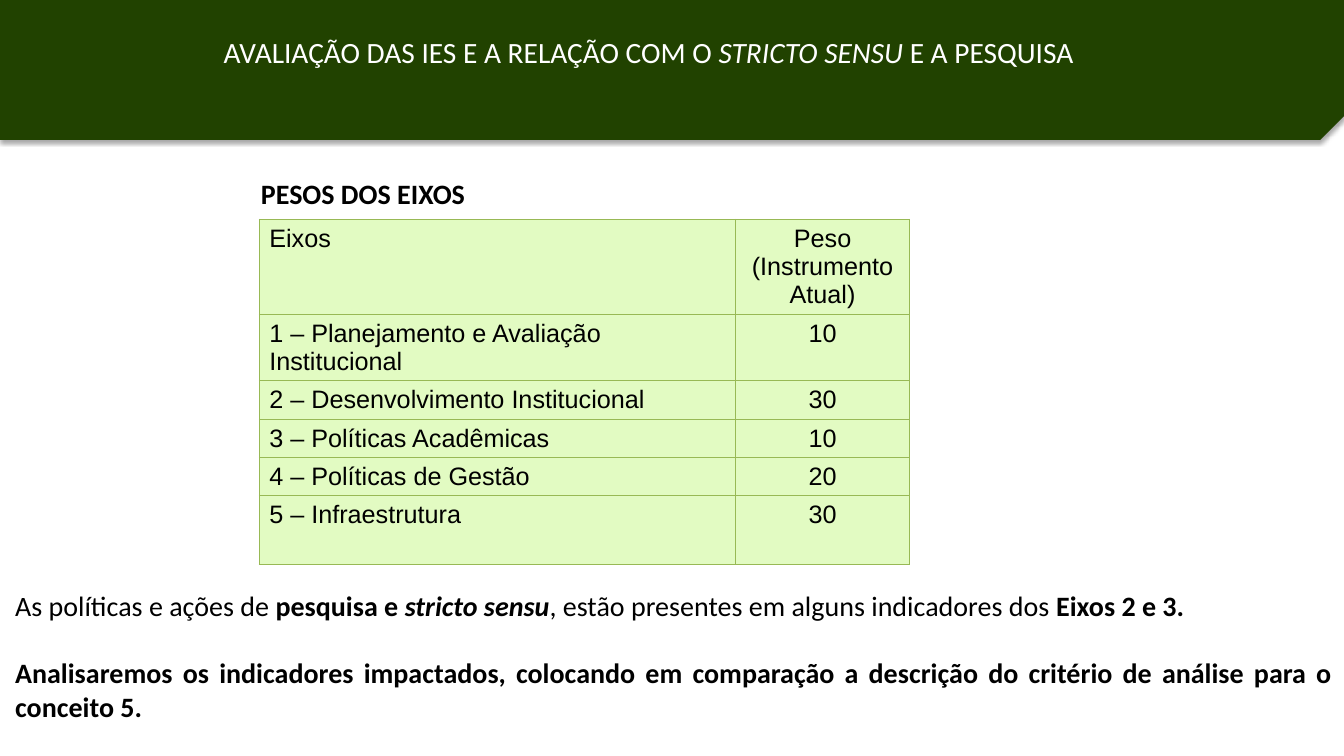
from dataclasses import dataclass
from typing import NamedTuple

from lxml import etree
from pptx import Presentation
from pptx.dml.color import RGBColor
from pptx.enum.shapes import MSO_SHAPE
from pptx.enum.text import MSO_ANCHOR, MSO_AUTO_SIZE, PP_ALIGN
from pptx.oxml.ns import qn
from pptx.util import Pt

SNIPPED = MSO_SHAPE.SNIP_1_RECTANGLE
TOP = MSO_ANCHOR.TOP
NO_FIT = MSO_AUTO_SIZE.NONE
LEFT, CENTER, JUSTIFY = PP_ALIGN.LEFT, PP_ALIGN.CENTER, PP_ALIGN.JUSTIFY


@dataclass(frozen=True)
class Theme:
    banner: str = "214200"
    cell: str = "E2FBC2"
    border: str = "98B955"
    ink: str = "000000"
    light: str = "FFFFFF"
    text_font: str = "Calibri"
    table_font: str = "Arial"
    title_size: float = 21
    text_size: float = 20
    table_size: float = 18
    border_width: float = 0.75


class Box(NamedTuple):
    left: float
    top: float
    width: float
    height: float


class Span(NamedTuple):
    text: str
    bold: bool = False
    italic: bool = False


class Axis(NamedTuple):
    name: str
    weight: str
    height: float


THEME = Theme()
TITLE = [Span("AVALIAÇÃO DAS IES E A RELAÇÃO COM O "),
         Span("STRICTO SENSU ", italic=True), Span("E A PESQUISA")]
HEADING = [Span("PESOS DOS EIXOS", bold=True)]
BODY = [
    [Span("As políticas e ações de "), Span("pesquisa e ", bold=True),
     Span("stricto sensu", bold=True, italic=True),
     Span(", estão presentes em alguns indicadores dos "),
     Span("Eixos 2 e 3.", bold=True)],
    [Span("Analisaremos os indicadores impactados, colocando em comparação a "
          "descrição do critério de análise para o conceito 5.", bold=True)],
]
AXES = [
    Axis("Eixos", "Peso\n(Instrumento Atual)", 67.8),
    Axis("1 – Planejamento e Avaliação Institucional", "10", 47.2),
    Axis("2 – Desenvolvimento Institucional", "30", 27.4),
    Axis("3 – Políticas Acadêmicas", "10", 27.4),
    Axis("4 – Políticas de Gestão", "20", 27.4),
    Axis("5 – Infraestrutura", "30", 49.2),
]
COLUMN_WIDTHS = (340, 124.8)


def place(sp, box: Box) -> None:
    sp.left, sp.top, sp.width, sp.height = map(Pt, box)


def style_run(r, font: str, size: float, color: str) -> None:
    r.font.name, r.font.size = font, Pt(size)
    r.font.color.rgb = RGBColor.from_string(color)


def write(sp, paragraphs: list, size: float, color: str,
          align=LEFT, gap: float = 0) -> None:
    tf = sp.text_frame
    tf.word_wrap, tf.auto_size, tf.vertical_anchor = True, NO_FIT, TOP
    for i, spans in enumerate(paragraphs):
        p = tf.paragraphs[0] if i == 0 else tf.add_paragraph()
        p.alignment, p.line_spacing = align, 1.0
        p.space_before, p.space_after = Pt(gap if i else 0), Pt(0)
        pPr = p._p.get_or_add_pPr()
        pPr.set("marL", "0")
        pPr.set("indent", "0")
        etree.SubElement(pPr, qn("a:buNone"))
        for span in spans:
            r = p.add_run()
            r.text = span.text
            r.font.bold, r.font.italic = span.bold, span.italic
            style_run(r, THEME.text_font, size, color)


def add_banner(s, box: Box):
    sp = s.shapes.add_shape(SNIPPED, *map(Pt, box))
    sp.fill.solid()
    sp.fill.fore_color.rgb = RGBColor.from_string(THEME.banner)
    sp.line.fill.background()
    sp.shadow.inherit = False
    spPr = sp._element.spPr
    spPr.find(qn("a:xfrm")).set("flipV", "1")
    shadow = etree.SubElement(
        spPr.find(qn("a:effectLst")), qn("a:outerShdw"), blurRad=str(Pt(3.1)),
        dist=str(Pt(1.8)), dir="5400000", rotWithShape="0")
    color = etree.SubElement(shadow, qn("a:srgbClr"), val=THEME.ink)
    etree.SubElement(color, qn("a:alpha"), val="35000")
    return sp


def add_borders(cell) -> None:
    tcPr = cell._tc.get_or_add_tcPr()
    for i, side in enumerate(("lnL", "lnR", "lnT", "lnB")):
        ln = etree.Element(qn(f"a:{side}"), w=str(Pt(THEME.border_width)))
        fill = etree.SubElement(ln, qn("a:solidFill"))
        etree.SubElement(fill, qn("a:srgbClr"), val=THEME.border)
        tcPr.insert(i, ln)


def fill_cell(cell, text: str, align) -> None:
    cell.text_frame.text = text
    cell.fill.solid()
    cell.fill.fore_color.rgb = RGBColor.from_string(THEME.cell)
    add_borders(cell)
    for p in cell.text_frame.paragraphs:
        p.alignment = align
        for r in p.runs:
            style_run(r, THEME.table_font, THEME.table_size, THEME.ink)


def add_weights(s, left: float, top: float) -> None:
    height = sum(axis.height for axis in AXES)
    box = Box(left, top, sum(COLUMN_WIDTHS), height)
    table = s.shapes.add_table(len(AXES), len(COLUMN_WIDTHS), *map(Pt, box)).table
    table.first_row = table.horz_banding = False
    for column, width in zip(table.columns, COLUMN_WIDTHS):
        column.width = Pt(width)
    for i, axis in enumerate(AXES):
        table.rows[i].height = Pt(axis.height)
        fill_cell(table.cell(i, 0), axis.name, LEFT)
        fill_cell(table.cell(i, 1), axis.weight, CENTER)


def main() -> None:
    prs = Presentation()
    prs.slide_width, prs.slide_height = Pt(960), Pt(540)
    s = prs.slides.add_slide(prs.slide_layouts[1])
    title, body = s.placeholders

    # Banner behind the title
    banner = add_banner(s, Box(0, -2.2, 960, 102.2))
    title._element.addprevious(banner._element)
    place(title, Box(152.6, 20.9, 633.6, 32.4))
    write(title, [TITLE], THEME.title_size, THEME.light)

    # Table of weights with its heading
    heading = s.shapes.add_textbox(*map(Pt, Box(179.3, 122.4, 481.7, 31.7)))
    write(heading, [HEADING], THEME.text_size, THEME.ink)
    add_weights(s, 185.2, 156.7)

    # Closing remarks
    place(body, Box(3.6, 416.9, 955.4, 104.4))
    write(body, BODY, THEME.text_size, THEME.ink, JUSTIFY, gap=24)

    prs.save("out.pptx")


if __name__ == "__main__":
    main()
